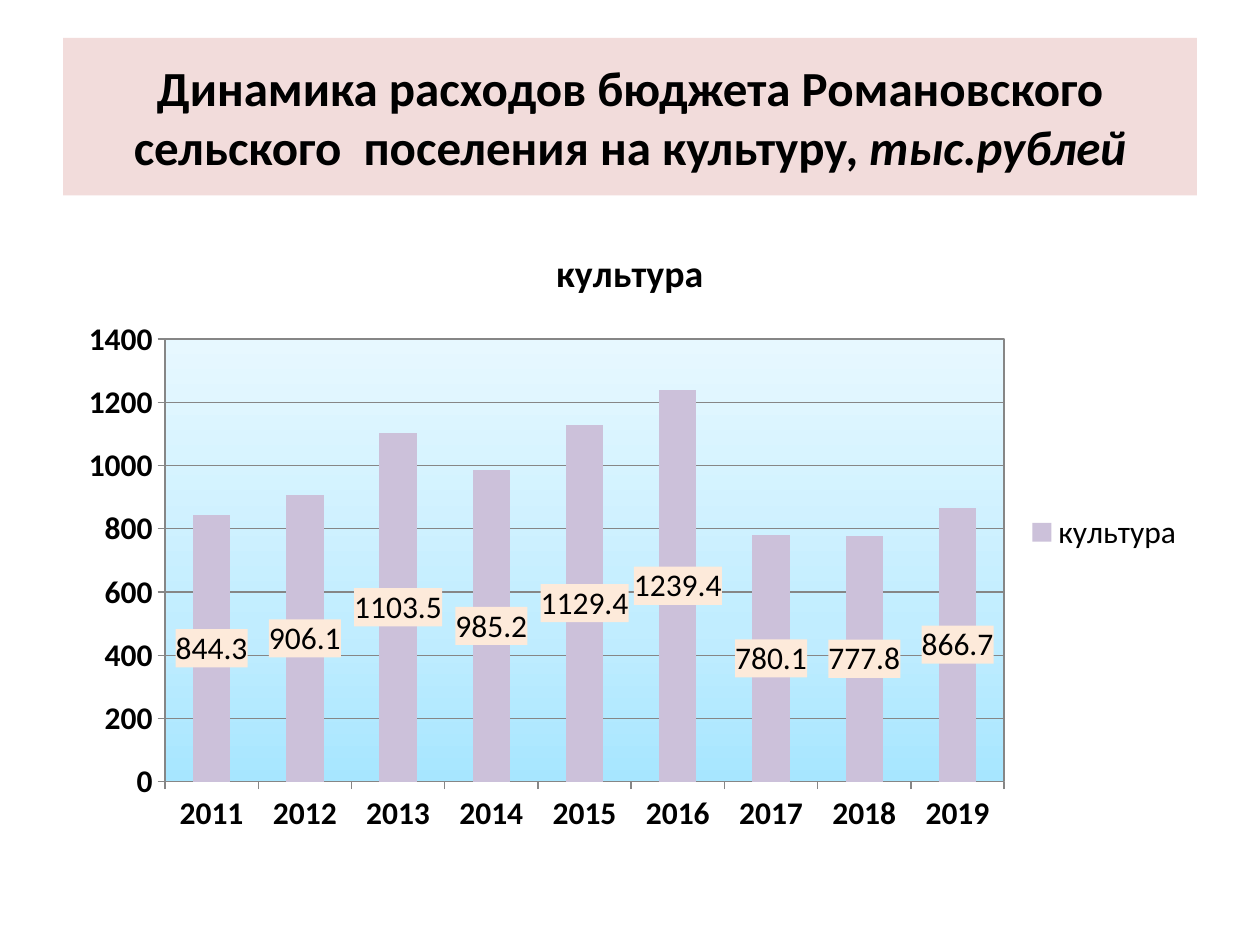
import pptx
import pptx.chart.data
import pptx.dml.color
import pptx.enum.chart
import pptx.enum.text
import pptx.oxml
import pptx.oxml.ns
import pptx.util
from pptx.util import Inches, Pt

RGB = pptx.dml.color.RGBColor
BLACK = RGB(0, 0, 0)
PINK = RGB(0xF2, 0xDC, 0xDB)
LILAC = RGB(0xCC, 0xC1, 0xDA)
GREY = RGB(0x86, 0x86, 0x86)
CREAM = RGB(0xFD, 0xEA, 0xDA)
SKY = [(0, RGB(0xA7, 0xE6, 0xFF)), (35, RGB(0xC1, 0xED, 0xFF)),
       (100, RGB(0xE7, 0xF8, 0xFF))]
FACE = "Calibri"
NAME = "культура"
YEARS = [str(year) for year in range(2011, 2020)]
COSTS = [844.3, 906.1, 1103.5, 985.2, 1129.4, 1239.4, 780.1, 777.8, 866.7]


def set_font(font, size, bold=False):
    font.name = FACE
    font.size = Pt(size)
    font.bold = bold
    font.color.rgb = BLACK


def add_title(slide):
    title = slide.shapes.title
    title.left, title.top = Inches(0.5), Inches(0.3)
    title.width, title.height = Inches(9), Inches(1.25)
    title.fill.solid()
    title.fill.fore_color.rgb = PINK
    frame = title.text_frame
    frame.word_wrap = True
    frame.vertical_anchor = pptx.enum.text.MSO_ANCHOR.MIDDLE
    para = frame.paragraphs[0]
    para.alignment = pptx.enum.text.PP_ALIGN.CENTER
    set_font(para.font, 28, True)
    para.add_run().text = ("Динамика расходов бюджета Романовского "
                           "сельского  поселения на культуру, ")
    unit = para.add_run()
    unit.text = "тыс.рублей"
    unit.font.italic = True


def style_axis(axis):
    set_font(axis.tick_labels.font, 18, True)
    axis.major_tick_mark = pptx.enum.chart.XL_TICK_MARK.OUTSIDE
    axis.format.line.color.rgb = GREY


def style_plot(chart, left, top, width, height):
    """Place the inner plot area by fractions and give it a gradient."""
    area = chart._chartSpace.chart.plotArea
    for old in area.findall(pptx.oxml.ns.qn("c:layout")):
        area.remove(old)
    spots = "".join(f'<c:{tag} val="{val}"/>' for tag, val in
                    zip("xywh", (left, top, width, height)))
    area.insert(0, pptx.oxml.parse_xml(
        f'<c:layout {pptx.oxml.ns.nsdecls("c")}><c:manualLayout>'
        '<c:layoutTarget val="inner"/><c:xMode val="edge"/>'
        f'<c:yMode val="edge"/>{spots}</c:manualLayout></c:layout>'))
    stops = "".join(f'<a:gs pos="{pos * 1000}"><a:srgbClr val="{color}"/></a:gs>'
                    for pos, color in SKY)
    area.append(pptx.oxml.parse_xml(
        f'<c:spPr {pptx.oxml.ns.nsdecls("c", "a")}><a:gradFill>'
        f'<a:gsLst>{stops}</a:gsLst><a:lin ang="16200000" scaled="0"/>'
        f'</a:gradFill><a:ln w="9525"><a:solidFill><a:srgbClr val="{GREY}"/>'
        '</a:solidFill></a:ln></c:spPr>'))


def style_labels(labels):
    labels.show_value = True
    labels.position = pptx.enum.chart.XL_LABEL_POSITION.CENTER
    set_font(labels.font, 18)
    fill = pptx.oxml.parse_xml(
        f'<c:spPr {pptx.oxml.ns.nsdecls("c", "a")}><a:solidFill>'
        f'<a:srgbClr val="{CREAM}"/></a:solidFill></c:spPr>')
    labels._element.find(pptx.oxml.ns.qn("c:txPr")).addprevious(fill)


def add_chart(slide):
    data = pptx.chart.data.CategoryChartData()
    data.categories = YEARS
    data.add_series(NAME, COSTS)
    chart = slide.shapes.add_chart(
        pptx.enum.chart.XL_CHART_TYPE.COLUMN_STACKED,
        Inches(0.5), Inches(1.75), Inches(9), Inches(4.95), data).chart
    set_font(chart.font, 18)

    chart.has_title = True
    head = chart.chart_title.text_frame
    head.text = NAME
    set_font(head.paragraphs[0].font, 21.6, True)
    chart.chart_title.include_in_layout = False

    chart.has_legend = True
    chart.legend.position = pptx.enum.chart.XL_LEGEND_POSITION.RIGHT
    chart.legend.include_in_layout = False
    set_font(chart.legend.font, 18)

    style_axis(chart.category_axis)
    scale = chart.value_axis
    style_axis(scale)
    scale.minimum_scale, scale.maximum_scale, scale.major_unit = 0, 1400, 200
    scale.has_major_gridlines = True
    scale.major_gridlines.format.line.color.rgb = GREY

    plot = chart.plots[0]
    plot.gap_width, plot.overlap = 150, 100
    plot.vary_by_categories = False
    bars = plot.series[0]
    bars.format.fill.solid()
    bars.format.fill.fore_color.rgb = LILAC
    style_labels(bars.data_labels)
    style_plot(chart, 0.09, 0.19, 0.74, 0.71)


def main():
    deck = pptx.Presentation()
    deck.slide_width, deck.slide_height = Inches(10), Inches(7.5)
    slide = deck.slides.add_slide(deck.slide_layouts[5])
    add_title(slide)
    add_chart(slide)
    deck.save("out.pptx")


if __name__ == "__main__":
    main()
